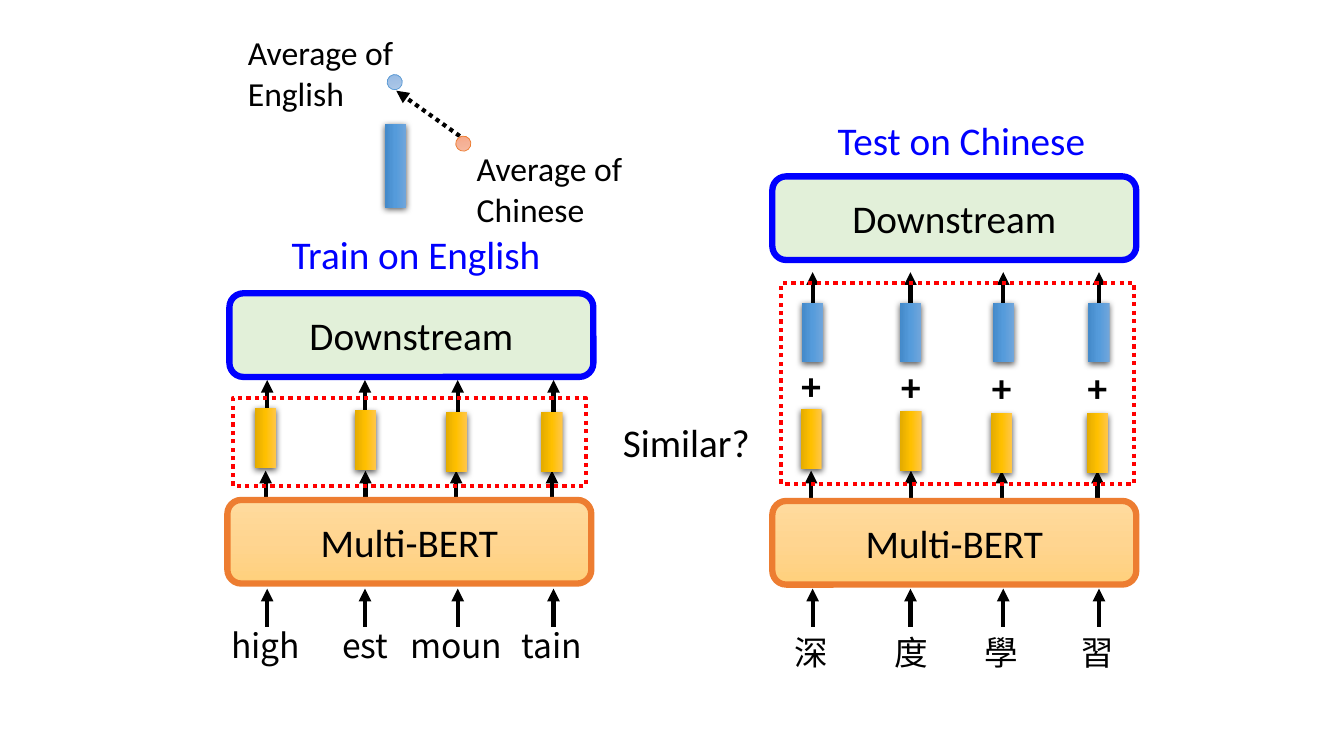
import copy

import lxml.etree
import pptx
import pptx.dml.color
import pptx.enum.dml
import pptx.enum.shapes
import pptx.enum.text
import pptx.oxml
import pptx.oxml.ns
import pptx.util

Inches = pptx.util.Inches
Pt = pptx.util.Pt
qn = pptx.oxml.ns.qn
color = pptx.dml.color.RGBColor.from_string
SHAPES = pptx.enum.shapes.MSO_SHAPE
DOTTED = pptx.enum.dml.MSO_LINE.ROUND_DOT
ALIGN = pptx.enum.text.PP_ALIGN

SHADOW = (
    f'<a:outerShdw {pptx.oxml.ns.nsdecls("a")} blurRad="57150" dist="19050" '
    'dir="5400000" algn="ctr" rotWithShape="0"><a:srgbClr val="000000">'
    '<a:alpha val="63000"/></a:srgbClr></a:outerShdw>'
)
YELLOW = ["FFC64B", "FFC000", "E3AB00"]
BLUE = ["71A6DB", "559BDB", "448ACA"]
ORANGE = ["FFDB9E", "FFD590", "FFD07C"]
PALE_BLUE = ["B1CBE9", "A3C1E5", "93B9E4"]
PALE_RED = ["F7BDA5", "F5B196", "F8A582"]


def paint(kind, center, size, fill=None, line=None, width=0, dash=None, turn=0, shadow=False):
    """Add a shape around its center; a list as fill is a gradient from the top down."""
    left, top = center[0] - size[0] / 2, center[1] - size[1] / 2
    shape = page.shapes.add_shape(kind, *map(Inches, (left, top, *size)))
    shape.rotation = turn
    shape.shadow.inherit = False
    if fill is None:
        shape.fill.background()
    elif isinstance(fill, str):
        shape.fill.solid()
        shape.fill.fore_color.rgb = color(fill)
    else:
        shape.fill.gradient()
        shape.fill.gradient_angle = 270
        stops = next(shape._element.spPr.iter(qn("a:gsLst")))
        stops.append(copy.deepcopy(stops[0]))
        for stop, shade, position in zip(shape.fill.gradient_stops, fill, (0, 0.5, 1)):
            stop.color.rgb = color(shade)
            stop.position = position
    if line:
        shape.line.color.rgb = color(line)
        shape.line.width = Pt(width)
        shape.line.dash_style = dash
    else:
        shape.line.fill.background()
    if shadow:
        shape._element.spPr.find(qn("a:effectLst")).append(pptx.oxml.parse_xml(SHADOW))
    return shape


def write(box, text, size=28, font="Calibri", ink="000000", bold=None, align=ALIGN.CENTER):
    box.text_frame.word_wrap = True
    para = box.text_frame.paragraphs[0]
    para.alignment = align
    span = para.add_run()
    span.text = text
    span.font.size, span.font.name, span.font.bold = Pt(size), font, bold
    span.font.color.rgb = color(ink)
    lxml.etree.SubElement(span.font._element, qn("a:ea"), typeface=font)


deck = pptx.Presentation()
deck.slide_width, deck.slide_height = Inches(13.33), Inches(7.5)
page = deck.slides.add_slide(deck.slide_layouts[6])

# Both models share the same four token columns, shifted by one panel
PANEL = 5.41
columns = [2.65, 3.62, 4.54, 5.49]
bars = [2.635, 3.625, 4.525, 5.475]
bar_drops = [0, 0.02, 0.04, 0.04]
models = [
    dict(shift=0, title="Train on English", title_top=2.24, center=4.08, head=3.325,
         output=4.38, bert_center=4.06, bert=5.375, bar=4.345, token_top=6.15,
         tokens=["high", "est", "moun", "tain"], frame=(4.06, 4.385, 0.87)),
    dict(shift=PANEL, title="Test on Chinese", title_top=1.1, center=9.465, head=2.165,
         output=3.31, bert_center=9.465, bert=5.385, bar=4.355, token_top=6.22,
         tokens=["深", "度", "學", "習"], frame=(9.5, 3.805, 1.99)),
]

# Arrows lie behind the boxes and bars
arrows = [((4.56, 1.35), (3.93, 0.9), DOTTED)]
for model in models:
    for column, bar in zip(columns, bars):
        x, bar_x = column + model["shift"], bar + model["shift"]
        arrows += [
            ((x, model["output"]), (x, model["output"] - 0.61), None),
            ((bar_x, 5.06), (bar_x, 4.67), None),
            ((x, 6.22), (x, 5.84), None),
        ]
for start, end, dash in arrows:
    arrow = page.shapes.add_connector(
        pptx.enum.shapes.MSO_CONNECTOR.STRAIGHT, *map(Inches, start + end))
    arrow.line.color.rgb = color("000000")
    arrow.line.width = Pt(3)
    arrow.line.dash_style = dash
    lxml.etree.SubElement(arrow.line._get_or_add_ln(), qn("a:tailEnd"), type="triangle")
    lxml.etree.SubElement(arrow._element.spPr, qn("a:effectLst"))

# Labels: text, left, top, width, height, format
left_aligned = dict(align=ALIGN.LEFT)
labels = [
    ("Average of English", 2.36, 0.27, 1.71, 0.91, dict(size=24, **left_aligned)),
    ("Average of Chinese", 4.63, 1.42, 1.71, 0.91, dict(size=24, **left_aligned)),
    ("Similar?", 6.08, 4.1, 1.68, 0.57, left_aligned),
]
for model in models:
    box = paint(SHAPES.ROUNDED_RECTANGLE, (model["center"], model["head"]), (3.61, 0.83),
                "E2F0D9", "0000FF", 4.5)
    write(box, "Downstream")
    box = paint(SHAPES.ROUNDED_RECTANGLE, (model["bert_center"], model["bert"]), (3.61, 0.83),
                ORANGE, "ED7D31", 4.5)
    write(box, "Multi-BERT")
    labels.append((model["title"], 2.77 + model["shift"], model["title_top"], 2.71, 0.57,
                   dict(ink="0000FF")))
    for bar, drop, token in zip(bars, bar_drops, model["tokens"]):
        x = bar + model["shift"]
        paint(SHAPES.RECTANGLE, (x, model["bar"] + drop), (0.59, 0.21), YELLOW,
              turn=90, shadow=True)
        labels.append((token, x - 0.62, model["token_top"], 1.24, 0.5,
                       dict(size=24, font="Noto Sans CJK SC")))

# Shift towards English added to every Chinese embedding
for column, bar, drop in zip(columns, bars, bar_drops):
    paint(SHAPES.RECTANGLE, (column + PANEL, 3.3), (0.59, 0.21), BLUE, turn=90, shadow=True)
    labels.append(("+", bar + PANEL - 0.27, 3.54 + drop / 2, 0.54, 0.57, dict(bold=True)))
paint(SHAPES.RECTANGLE, (3.925, 1.645), (0.83, 0.21), BLUE, turn=90, shadow=True)
paint(SHAPES.OVAL, (3.915, 0.815), (0.15, 0.15), PALE_BLUE, "5B9BD5", 0.5, turn=169.8)
paint(SHAPES.OVAL, (4.595, 1.425), (0.15, 0.15), PALE_RED, "ED7D31", 0.5, turn=169.8)

for text, left, top, width, height, style in labels:
    box = page.shapes.add_textbox(*map(Inches, (left, top, width, height)))
    write(box, text, **style)

for model in models:
    x, y, height = model["frame"]
    paint(SHAPES.RECTANGLE, (x, y), (3.5, height), line="FF0000", width=3, dash=DOTTED)

deck.save("out.pptx")
